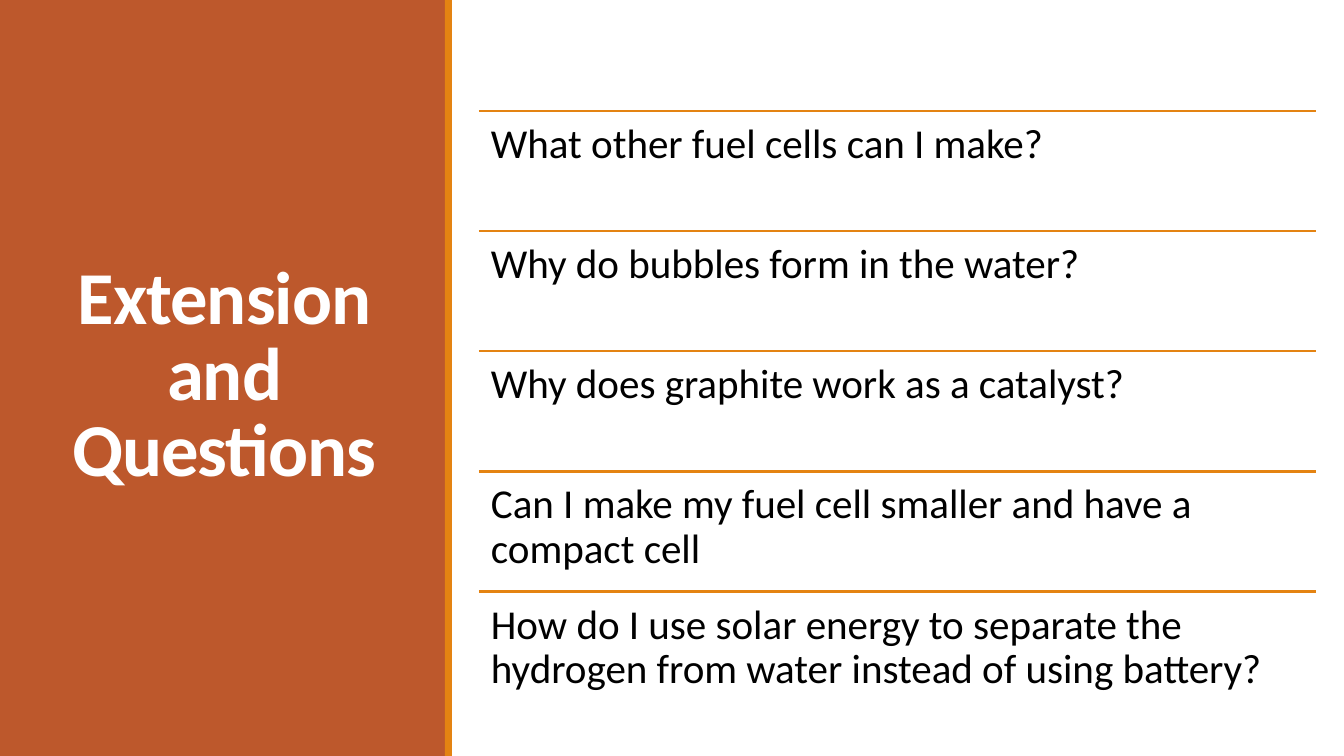
from lxml.etree import SubElement
from pptx import Presentation
from pptx.dml.color import RGBColor
from pptx.enum.shapes import MSO_CONNECTOR, MSO_SHAPE
from pptx.enum.text import MSO_ANCHOR, MSO_AUTO_SIZE, PP_ALIGN
from pptx.oxml.ns import qn
from pptx.util import Cm, Pt

COLORS = {"panel": "BD582C", "accent": "E48312", "title": "FFFFFF", "text": "000000"}
QUESTIONS = [
    "What other fuel cells can I make?",
    "Why do bubbles form in the water?",
    "Why does graphite work as a catalyst?",
    "Can I make my fuel cell smaller and have a compact cell",
    "How do I use solar energy to separate the hydrogen from water instead of using battery?",
]
SLIDE_HEIGHT = 14.29
LIST_LEFT, LIST_TOP, LIST_WIDTH, ROW_HEIGHT = 9.05, 2.1, 15.83, 2.27


def style_paragraph(paragraph, size, color, spacing):
    paragraph.line_spacing = spacing
    paragraph.font.name = "Calibri"
    paragraph.font.size = Pt(size)
    paragraph.font.color.rgb = RGBColor.from_string(COLORS[color])


prs = Presentation()
prs.slide_width, prs.slide_height = Cm(25.4), Cm(SLIDE_HEIGHT)
slide = prs.slides.add_slide(prs.slide_layouts[5])

# Title on the left
title = slide.shapes.title
title.left, title.top, title.width, title.height = Cm(1.02), Cm(1.27), Cm(6.43), Cm(11.75)
title.text_frame.text = "Extension and Questions"
title.text_frame.word_wrap = True
title.text_frame.auto_size = MSO_AUTO_SIZE.NONE
title.text_frame.vertical_anchor = MSO_ANCHOR.MIDDLE
heading = title.text_frame.paragraphs[0]
heading.alignment = PP_ALIGN.CENTER
style_paragraph(heading, 40, "title", 0.85)
heading.font.bold = True
heading.runs[0]._r.get_or_add_rPr().set("spc", "-50")

# Side panel and its edge, placed behind the title
for left, width, color in [(0, 8.43, "panel"), (8.41, 0.13, "accent")]:
    band = slide.shapes.add_shape(
        MSO_SHAPE.RECTANGLE, Cm(left), Cm(0), Cm(width), Cm(SLIDE_HEIGHT))
    band.shadow.inherit = False
    band.fill.solid()
    band.fill.fore_color.rgb = RGBColor.from_string(COLORS[color])
    band.line.fill.background()
    title.element.addprevious(band.element)

# Questions, each under a rule
for row, question in enumerate(QUESTIONS):
    top = Cm(LIST_TOP + row * ROW_HEIGHT)
    rule = slide.shapes.add_connector(
        MSO_CONNECTOR.STRAIGHT, Cm(LIST_LEFT), top, Cm(LIST_LEFT + LIST_WIDTH), top)
    rule.line.color.rgb = RGBColor.from_string(COLORS["accent"])
    rule.line.width = Pt(1.25)
    SubElement(rule.element.spPr, qn("a:effectLst"))

    entry = slide.shapes.add_textbox(Cm(LIST_LEFT), top, Cm(LIST_WIDTH), Cm(ROW_HEIGHT))
    frame = entry.text_frame
    frame.word_wrap = True
    frame.margin_left = frame.margin_right = Cm(0.23)
    frame.margin_top = frame.margin_bottom = Cm(0.23)
    frame.text = question
    style_paragraph(frame.paragraphs[0], 22, "text", 0.9)

prs.save("out.pptx")
